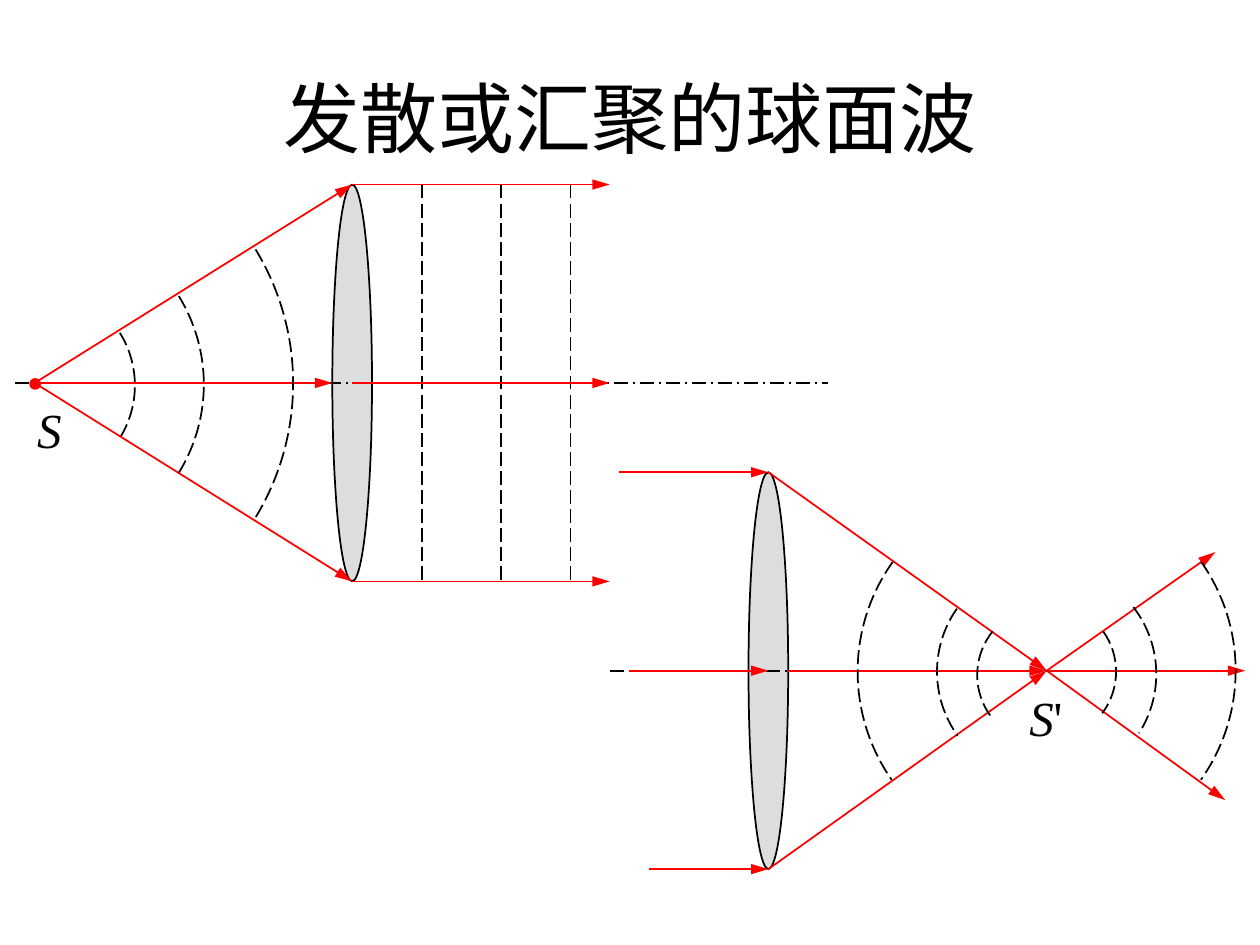
from dataclasses import dataclass
from math import asin, cos, sin, tan

from lxml.etree import SubElement
from pptx import Presentation
from pptx.dml.color import RGBColor
from pptx.enum.dml import MSO_LINE
from pptx.enum.shapes import MSO_CONNECTOR, MSO_SHAPE
from pptx.enum.text import MSO_ANCHOR, MSO_AUTO_SIZE, PP_ALIGN
from pptx.oxml.ns import qn
from pptx.util import Cm, Pt


@dataclass(frozen=True)
class Theme:
    ink: RGBColor = RGBColor(0, 0, 0)
    ray: RGBColor = RGBColor(255, 0, 0)
    glass: RGBColor = RGBColor(0xDD, 0xDD, 0xDD)
    title_font: str = "Arial"
    label_font: str = "Times New Roman"
    title_size: Pt = Pt(44)
    label_size: Pt = Pt(28)
    line: Pt = Pt(1)


theme = Theme()

# Content: all lengths in centimetres
TITLE = "发散或汇聚的球面波"
LENS_W, LENS_H, DOT = 0.8, 8, 0.2
SOURCE = (0.7, 7.72)
FOCUS = (21.1, 13.52)
LENS_1 = (7.1, SOURCE[1])
LENS_2 = (15.49, FOCUS[1])
BEAM_END = 12.29
AXES = [(0.3, 16.69, SOURCE[1]), (12.29, 23.09, FOCUS[1])]  # x from, x to, y
PLANE_WAVES = [8.5, 10.1, 11.5]
BEAM_STARTS = [12.48, 12.68, 13.09]
EXITS = [(24.7, 16.13), (24.5, 11.13), (25.1, FOCUS[1])]

# Spherical waves: centre x, centre y, radius, top, bottom, side (1 right, -1 left)
WAVES = [
    (0.71, 7.77, 2.01, 6.71, 8.79, 1),
    (0.71, 7.75, 3.4, 5.97, 9.55, 1),
    (0.71, 7.73, 5.2, 5.03, 10.49, 1),
    (21.1, 13.54, 1.4, 12.73, 14.38, 1),
    (21.1, 13.61, 1.4, 12.73, 14.45, -1),
    (21.1, 13.54, 2.21, 12.27, 14.83, -1),
    (21.1, 13.59, 2.21, 12.24, 14.78, 1),
    (21.1, 13.54, 3.81, 11.33, 15.72, -1),
    (21.1, 13.52, 3.81, 11.33, 15.72, 1),
]
# Labels: left, top, width, height, runs of (text, italic)
LABELS = [
    (0.5, 7.92, 1.02, 1.45, [("S", True)]),
    (20.5, 13.73, 1.19, 1.45, [("S", True), ("'", False)]),
]

prs = Presentation()
prs.slide_width, prs.slide_height = Cm(25.4), Cm(19.05)
shapes = prs.slides.add_slide(prs.slide_layouts[6]).shapes


def style_line(sp, color, dash=None):
    sp.line.color.rgb = color
    sp.line.width = theme.line
    if dash:
        sp.line.dash_style = dash


def add_ellipse(center, width, height, fill, outline):
    x, y = center
    sp = shapes.add_shape(MSO_SHAPE.OVAL, Cm(x - width / 2), Cm(y - height / 2),
                          Cm(width), Cm(height))
    sp.shadow.inherit = False
    sp.fill.solid()
    sp.fill.fore_color.rgb = fill
    style_line(sp, outline)


def add_line(start, end, color=theme.ink, dash=None):
    sp = shapes.add_connector(MSO_CONNECTOR.STRAIGHT, *map(Cm, start + end))
    style_line(sp, color, dash)
    SubElement(sp._element.spPr, qn("a:effectLst"))
    return sp


def add_ray(start, end):
    sp = add_line(start, end, theme.ray)
    SubElement(sp.line._get_or_add_ln(), qn("a:tailEnd"),
               type="triangle", w="med", len="lg")


def add_wave(cx, cy, radius, top, bottom, side):
    """Arc stroked on its own, over an unstroked sector back to the centre."""
    def at(angle, tangent=0):
        return (Cm(cx + side * radius * (cos(angle) - tangent * sin(angle))),
                Cm(cy + radius * (sin(angle) + tangent * cos(angle))))

    first, last = asin((top - cy) / radius), asin((bottom - cy) / radius)
    center = (Cm(cx), Cm(cy))
    builder = shapes.build_freeform(*center)
    builder.add_line_segments([at(first), at(0), at(last)], close=True)
    sp = builder.convert_to_shape()
    sp.shadow.inherit = False
    sp.fill.background()
    style_line(sp, theme.ink, MSO_LINE.LONG_DASH)

    # Smooth curves: one cubic from each end to the widest point
    arc = [("moveTo", [at(first)])]
    for a, b in ((first, 0), (0, last)):
        k = 4 / 3 * tan((b - a) / 4)
        arc.append(("cubicBezTo", [at(a, k), at(b, -k), at(b)]))
    sector = arc + [("lnTo", [center]), ("close", [])]
    path_list = sp._element.spPr.find(".//" + qn("a:pathLst"))
    path_list.clear()
    for steps, mode in ((arc, {"fill": "none"}), (sector, {"stroke": "0"})):
        outline = SubElement(path_list, qn("a:path"), w=str(sp.width),
                             h=str(sp.height), **mode)
        for tag, points in steps:
            step = SubElement(outline, qn("a:" + tag))
            for x, y in points:
                SubElement(step, qn("a:pt"), x=str(x - sp.left), y=str(y - sp.top))


def add_text(box, runs, font, size):
    tf = shapes.add_textbox(*map(Cm, box)).text_frame
    p = tf.paragraphs[0]
    p.font.name, p.font.size, p.font.color.rgb = font, size, theme.ink
    for text, italic in runs:
        r = p.add_run()
        r.text = text
        r.font.italic = italic
    return tf


def edges(lens):
    """Top, middle and bottom points of a lens."""
    x, y = lens
    return [(x, y + k * LENS_H / 2) for k in (-1, 0, 1)]


# Title
tf = add_text((1.27, 0.76, 22.86, 3.18), [(TITLE, False)],
              theme.title_font, theme.title_size)
tf.word_wrap = True
tf.vertical_anchor = MSO_ANCHOR.MIDDLE
tf.paragraphs[0].alignment = PP_ALIGN.CENTER

# Lenses and optical axes
for lens in (LENS_1, LENS_2):
    add_ellipse(lens, LENS_W, LENS_H, theme.glass, theme.ink)
for x1, x2, y in AXES:
    add_line((x1, y), (x2, y), dash=MSO_LINE.LONG_DASH_DOT)

# Diverging wave: source to lens, then parallel beam
top, middle, bottom = edges(LENS_1)
for target in (top, (LENS_1[0] - LENS_W / 2, middle[1]), bottom):
    add_ray(SOURCE, target)
for x in PLANE_WAVES:
    add_line((x, top[1]), (x, bottom[1]), dash=MSO_LINE.LONG_DASH)
for x, y in (top, middle, bottom):
    add_ray((x, y), (BEAM_END, y))

# Converging wave: parallel beam to lens, focus and beyond
top, middle, bottom = edges(LENS_2)
for x, point in zip(BEAM_STARTS, (top, middle, bottom)):
    add_ray((x, point[1]), point)
for start in (top, bottom, (LENS_2[0] + LENS_W / 2, middle[1])):
    add_ray(start, FOCUS)
for end in EXITS:
    add_ray(FOCUS, end)

# Spherical wavefronts
for wave in WAVES:
    add_wave(*wave)

# Source point and labels
for *box, runs in LABELS:
    tf = add_text(box, runs, theme.label_font, theme.label_size)
    tf.word_wrap = False
    tf.auto_size = MSO_AUTO_SIZE.SHAPE_TO_FIT_TEXT
add_ellipse((SOURCE[0] + 0.01, SOURCE[1] + 0.02), DOT, DOT, theme.ray, theme.ray)

prs.save("out.pptx")
